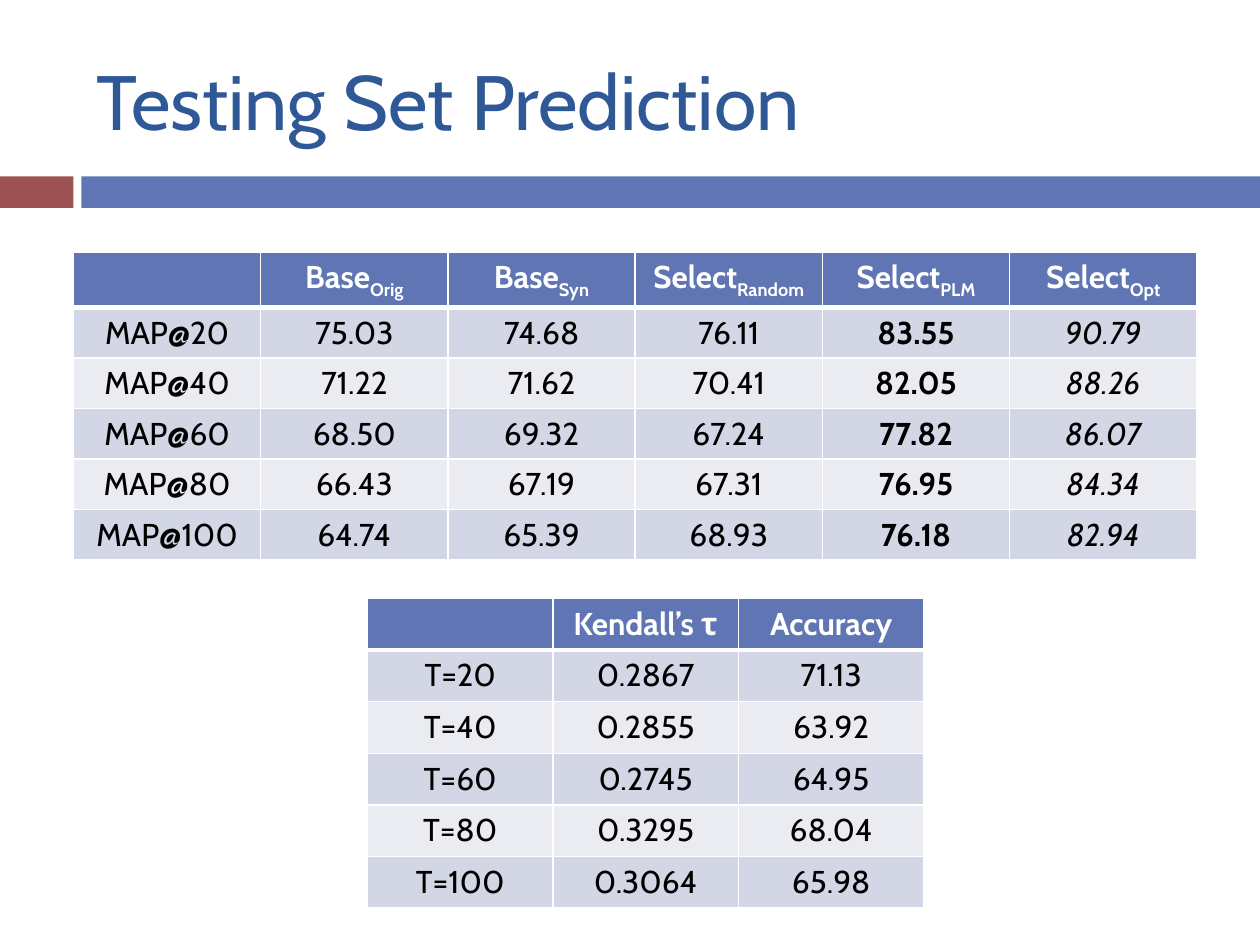
from lxml import etree
from pptx import Presentation
from pptx.dml.color import RGBColor
from pptx.enum.shapes import MSO_SHAPE
from pptx.enum.text import MSO_ANCHOR, PP_ALIGN
from pptx.oxml.ns import qn
from pptx.util import Inches, Pt

RECTANGLE = MSO_SHAPE.RECTANGLE
MIDDLE = MSO_ANCHOR.MIDDLE
CENTER = PP_ALIGN.CENTER

COLORS = {
    "title": "2F5897", "accent": "9C5252", "header": "6076B4",
    "odd_row": "D2D6E5", "even_row": "EAECF2",
    "white": "FFFFFF", "black": "000000",
}
GRID_COLUMNS, GRID_ROWS = 120, 90

PRECISION = {
    "header": ["", "Base|Orig", "Base|Syn", "Select|Random", "Select|PLM", "Select|Opt"],
    "rows": [
        ["MAP@20", "75.03", "74.68", "76.11", "83.55", "90.79"],
        ["MAP@40", "71.22", "71.62", "70.41", "82.05", "88.26"],
        ["MAP@60", "68.50", "69.32", "67.24", "77.82", "86.07"],
        ["MAP@80", "66.43", "67.19", "67.31", "76.95", "84.34"],
        ["MAP@100", "64.74", "65.39", "68.93", "76.18", "82.94"],
    ],
    "column_formats": {4: {"bold": True}, 5: {"italic": True}},
}
RANKING = {
    "header": ["", "Kendall’s τ", "Accuracy"],
    "rows": [
        ["T=20", "0.2867", "71.13"],
        ["T=40", "0.2855", "63.92"],
        ["T=60", "0.2745", "64.95"],
        ["T=80", "0.3295", "68.04"],
        ["T=100", "0.3064", "65.98"],
    ],
    "column_formats": {},
}


def rgb(name):
    return RGBColor.from_string(COLORS[name])


class SlideBuilder:
    """Holds the style and the current slide; lengths are grid units."""

    font_name = "Cabin"
    title_size = 44
    table_size = 18

    def __init__(self, presentation):
        self.column = presentation.slide_width / GRID_COLUMNS
        self.row = presentation.slide_height / GRID_ROWS
        self.slide = presentation.slides.add_slide(presentation.slide_layouts[6])

    def place(self, left, top, width, height):
        return (round(left * self.column), round(top * self.row),
                round(width * self.column), round(height * self.row))

    def add_run(self, paragraph, text, size, color, **formats):
        run = paragraph.add_run()
        run.text = text
        values = {"name": self.font_name, "size": Pt(size), **formats}
        for attribute, value in values.items():
            setattr(run.font, attribute, value)
        run.font.color.rgb = rgb(color)
        return run

    def bar(self, area, color):
        shape = self.slide.shapes.add_shape(RECTANGLE, *self.place(*area))
        shape.shadow.inherit = False
        shape.fill.solid()
        shape.fill.fore_color.rgb = rgb(color)
        shape.line.fill.background()

    def title(self, area, text):
        frame = self.slide.shapes.add_textbox(*self.place(*area)).text_frame
        frame.word_wrap = True
        frame.vertical_anchor = MIDDLE
        self.add_run(frame.paragraphs[0], text, self.title_size, "title")

    def borders(self, cell, top, bottom):
        properties = cell._tc.get_or_add_tcPr()
        for side, width in {"L": 1, "R": 1, "T": top, "B": bottom}.items():
            line = etree.SubElement(properties, qn(f"a:ln{side}"), w=str(Pt(width)))
            fill = etree.SubElement(line, qn("a:solidFill"))
            etree.SubElement(fill, qn("a:srgbClr"), val=COLORS["white"])

    def cell(self, cell, text, fill, color, **formats):
        cell.fill.solid()
        cell.fill.fore_color.rgb = rgb(fill)
        paragraph = cell.text_frame.paragraphs[0]
        paragraph.alignment = CENTER
        if not text:
            return
        # Text after the bar sign is set as a subscript
        base, _, subscript = text.partition("|")
        self.add_run(paragraph, base, self.table_size, color, **formats)
        if subscript:
            run = self.add_run(paragraph, subscript, self.table_size, color, **formats)
            run._r.get_or_add_rPr().set("baseline", "-25000")

    def table(self, area, header, rows, column_formats):
        records = [header, *rows]
        table = self.slide.shapes.add_table(
            len(records), len(header), *self.place(*area)).table
        table.horz_banding = False
        for i, record in enumerate(records):
            for j, text in enumerate(record):
                cell = table.cell(i, j)
                # A thick rule parts the header from the body
                self.borders(cell, top=3 if i == 1 else 1, bottom=3 if i == 0 else 1)
                if i == 0:
                    self.cell(cell, text, "header", "white", bold=True)
                else:
                    formats = {"bold": False, **column_formats.get(j, {})}
                    fill = "odd_row" if i % 2 else "even_row"
                    self.cell(cell, text, fill, "black", **formats)


def main():
    presentation = Presentation()
    presentation.slide_width, presentation.slide_height = Inches(10), Inches(7.5)
    builder = SlideBuilder(presentation)

    # Title band
    builder.bar((0, 16.8, 7, 3), "accent")
    builder.bar((7.75, 16.8, 112.25, 3), "header")
    builder.title((8, 3, 107, 13), "Testing Set Prediction")

    # Result tables
    builder.table((7, 24, 107, 28.8), **PRECISION)
    builder.table((35, 57, 53, 29.5), **RANKING)

    presentation.save("out.pptx")


if __name__ == "__main__":
    main()
